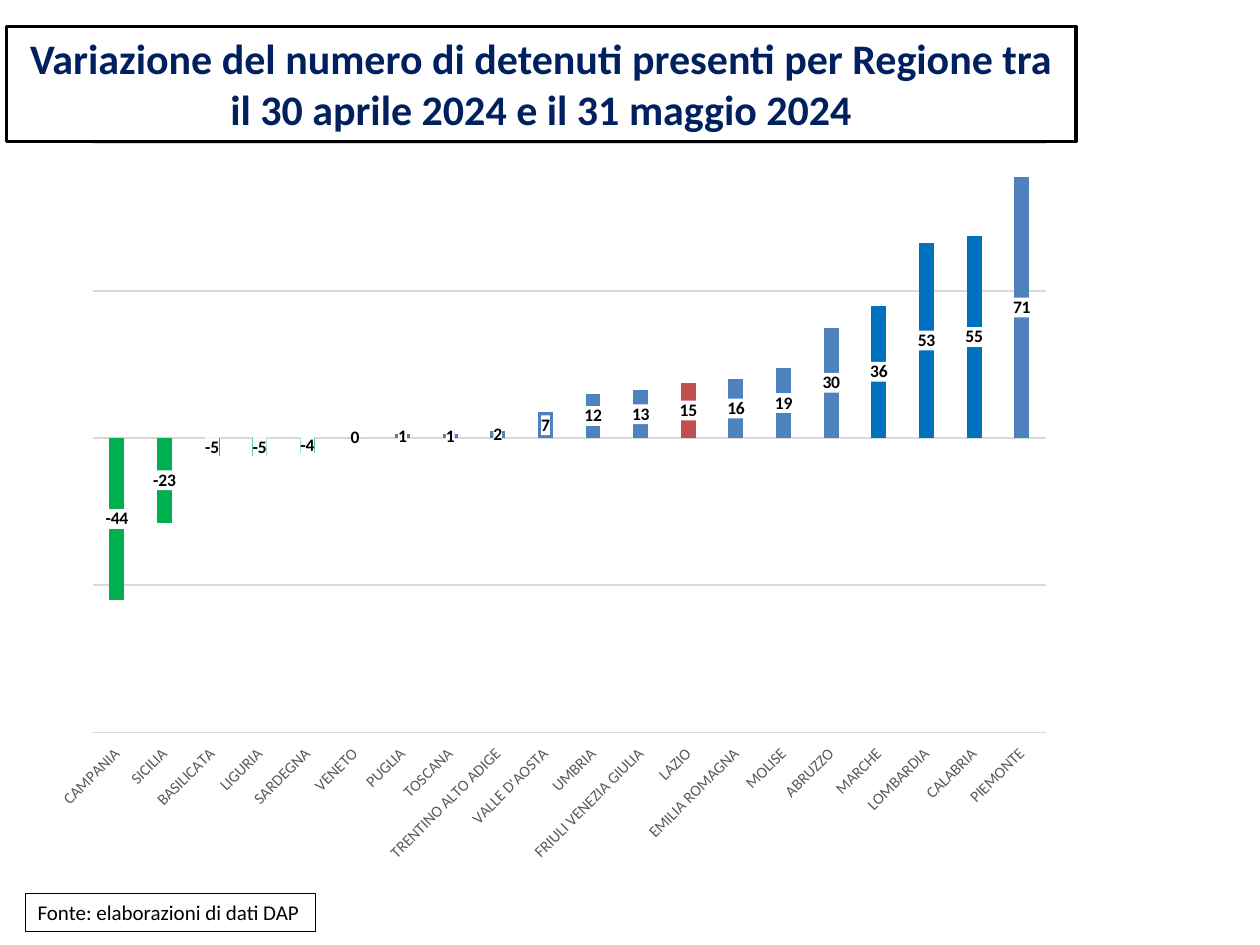
from dataclasses import dataclass
from typing import NamedTuple

from lxml.etree import SubElement
from pptx import Presentation
from pptx.chart.data import CategoryChartData
from pptx.dml.color import RGBColor
from pptx.enum.chart import XL_CHART_TYPE as ChartType
from pptx.enum.chart import XL_LABEL_POSITION as LabelPos
from pptx.enum.chart import XL_TICK_LABEL_POSITION as TickLabelPos
from pptx.enum.chart import XL_TICK_MARK as TickMark
from pptx.enum.text import MSO_ANCHOR as Anchor
from pptx.enum.text import MSO_AUTO_SIZE as AutoSize
from pptx.enum.text import PP_ALIGN as Align
from pptx.oxml import parse_xml
from pptx.oxml.ns import nsdecls, qn
from pptx.util import Pt


@dataclass(frozen=True)
class Theme:
    font: str = "Calibri"
    white: str = "FFFFFF"
    black: str = "000000"
    navy: str = "002060"
    grey: str = "595959"
    grid: str = "D9D9D9"
    rise: str = "4F81BD"
    strong_rise: str = "0070C0"
    fall: str = "00B050"
    lazio: str = "C0504D"
    title_size: float = 24
    source_size: float = 12
    label_size: float = 10
    axis_size: float = 9


class Box(NamedTuple):
    left: float
    top: float
    width: float
    height: float


class Region(NamedTuple):
    name: str
    change: int
    color: str


THEME = Theme()
TITLE_BOX = Box(3.6, 15.1, 611.3, 65.7)
SOURCE_BOX = Box(14.4, 510.5, 165.8, 21.8)
CHART_BOX = Box(31.7, 80.6, 580.3, 412.6)
PLOT_AREA = {"x": 0.037, "y": 0.004, "w": 0.938, "h": 0.815}

REGIONS = [
    Region("CAMPANIA", -44, THEME.fall),
    Region("SICILIA", -23, THEME.fall),
    Region("BASILICATA", -5, THEME.fall),
    Region("LIGURIA", -5, THEME.fall),
    Region("SARDEGNA", -4, THEME.fall),
    Region("VENETO", 0, THEME.fall),
    Region("PUGLIA", 1, THEME.rise),
    Region("TOSCANA", 1, THEME.rise),
    Region("TRENTINO ALTO ADIGE", 2, THEME.rise),
    Region("VALLE D'AOSTA", 7, THEME.rise),
    Region("UMBRIA", 12, THEME.rise),
    Region("FRIULI VENEZIA GIULIA", 13, THEME.rise),
    Region("LAZIO", 15, THEME.lazio),
    Region("EMILIA ROMAGNA", 16, THEME.rise),
    Region("MOLISE", 19, THEME.rise),
    Region("ABRUZZO", 30, THEME.rise),
    Region("MARCHE", 36, THEME.strong_rise),
    Region("LOMBARDIA", 53, THEME.strong_rise),
    Region("CALABRIA", 55, THEME.strong_rise),
    Region("PIEMONTE", 71, THEME.rise),
]


def assign(target, values: dict) -> None:
    for name, value in values.items():
        setattr(target, name, value)


def in_points(box: Box) -> list:
    return [Pt(length) for length in box]


def style_font(font, size: float, color: str, bold: bool = False) -> None:
    assign(font, {"name": THEME.font, "size": Pt(size), "bold": bold})
    font.color.rgb = RGBColor.from_string(color)


def style_fill(fill, color: str) -> None:
    fill.solid()
    fill.fore_color.rgb = RGBColor.from_string(color)


def style_line(line, color: str, width: float) -> None:
    style_fill(line.fill, color)
    line.width = Pt(width)


def fill_frame(frame_box, text: str, border: float, size: float, color: str,
               bold: bool, frame_format: dict, align: Align) -> None:
    """Write one paragraph into a white box with a black border."""
    style_fill(frame_box.fill, THEME.white)
    style_line(frame_box.line, THEME.black, border)
    frame = frame_box.text_frame
    assign(frame, frame_format)
    paragraph = frame.paragraphs[0]
    paragraph.alignment = align
    words = paragraph.add_run()
    words.text = text
    style_font(words.font, size, color, bold)


def place_plot(chart) -> None:
    """Fix the inner plot area as fractions of the chart."""
    plot_area = chart._chartSpace.chart.plotArea
    for old_layout in plot_area.findall(qn("c:layout")):
        plot_area.remove(old_layout)
    layout = parse_xml(f"<c:layout {nsdecls('c')}/>")
    plot_area.insert(0, layout)
    manual = SubElement(layout, qn("c:manualLayout"))
    settings = {"layoutTarget": "inner", "xMode": "edge", "yMode": "edge"}
    for tag, value in {**settings, **PLOT_AREA}.items():
        SubElement(manual, qn(f"c:{tag}")).set("val", str(value))


def style_axes(chart) -> None:
    region_axis = chart.category_axis
    assign(region_axis, {
        "tick_label_position": TickLabelPos.LOW,
        "major_tick_mark": TickMark.NONE,
        "minor_tick_mark": TickMark.NONE,
        "has_major_gridlines": False,
    })
    style_line(region_axis.format.line, THEME.grid, 0.75)
    style_font(region_axis.tick_labels.font, THEME.axis_size, THEME.grey)
    # Slanted region names
    slant = region_axis._element.find(qn("c:txPr")).find(qn("a:bodyPr"))
    slant.set("rot", "-2700000")
    slant.set("vert", "horz")

    change_axis = chart.value_axis
    assign(change_axis, {
        "minimum_scale": -80,
        "maximum_scale": 80,
        "major_unit": 40,
        "has_major_gridlines": True,
        "visible": False,
    })
    style_line(change_axis.major_gridlines.format.line, THEME.grid, 0.75)


def style_labels(bars) -> None:
    labels = bars.data_labels
    assign(labels, {"show_value": True, "position": LabelPos.CENTER})
    style_font(labels.font, THEME.label_size, THEME.black, bold=True)
    # White plate behind each value
    plate = parse_xml(
        f"<c:spPr {nsdecls('c', 'a')}><a:solidFill>"
        f'<a:srgbClr val="{THEME.white}"/></a:solidFill></c:spPr>')
    labels._element.find(qn("c:txPr")).addprevious(plate)


def add_change_chart(slide, regions: list[Region]) -> None:
    changes = CategoryChartData()
    changes.categories = [region.name for region in regions]
    changes.add_series("Series 1", [region.change for region in regions])
    chart = slide.shapes.add_chart(
        ChartType.COLUMN_CLUSTERED, *in_points(CHART_BOX), changes).chart
    assign(chart, {"has_title": False, "has_legend": False})
    style_font(chart.font, THEME.label_size, THEME.black)
    place_plot(chart)
    style_axes(chart)

    columns = chart.plots[0]
    assign(columns, {"gap_width": 219, "overlap": -27, "vary_by_categories": False})
    bars = columns.series[0]
    bars.invert_if_negative = False
    style_fill(bars.format.fill, THEME.rise)
    for index, region in enumerate(regions):
        if region.color != THEME.rise:
            style_fill(bars.points[index].format.fill, region.color)
    style_labels(bars)


def main() -> None:
    deck = Presentation()
    assign(deck, {"slide_width": Pt(720), "slide_height": Pt(540)})
    slide = deck.slides.add_slide(deck.slide_layouts[5])

    # Title
    title = slide.shapes.title
    assign(title, dict(zip(Box._fields, in_points(TITLE_BOX))))
    fill_frame(
        title,
        "Variazione del numero di detenuti presenti per Regione tra "
        "il 30 aprile 2024 e il 31 maggio 2024",
        2, THEME.title_size, THEME.navy, True,
        {"word_wrap": True, "auto_size": AutoSize.SHAPE_TO_FIT_TEXT,
         "vertical_anchor": Anchor.TOP}, Align.CENTER)

    # Source note
    source = slide.shapes.add_textbox(*in_points(SOURCE_BOX))
    fill_frame(
        source, "Fonte: elaborazioni di dati DAP",
        0.75, THEME.source_size, THEME.black, False,
        {"word_wrap": False, "auto_size": AutoSize.SHAPE_TO_FIT_TEXT}, Align.LEFT)

    # Change by region
    add_change_chart(slide, REGIONS)
    deck.save("out.pptx")


if __name__ == "__main__":
    main()
